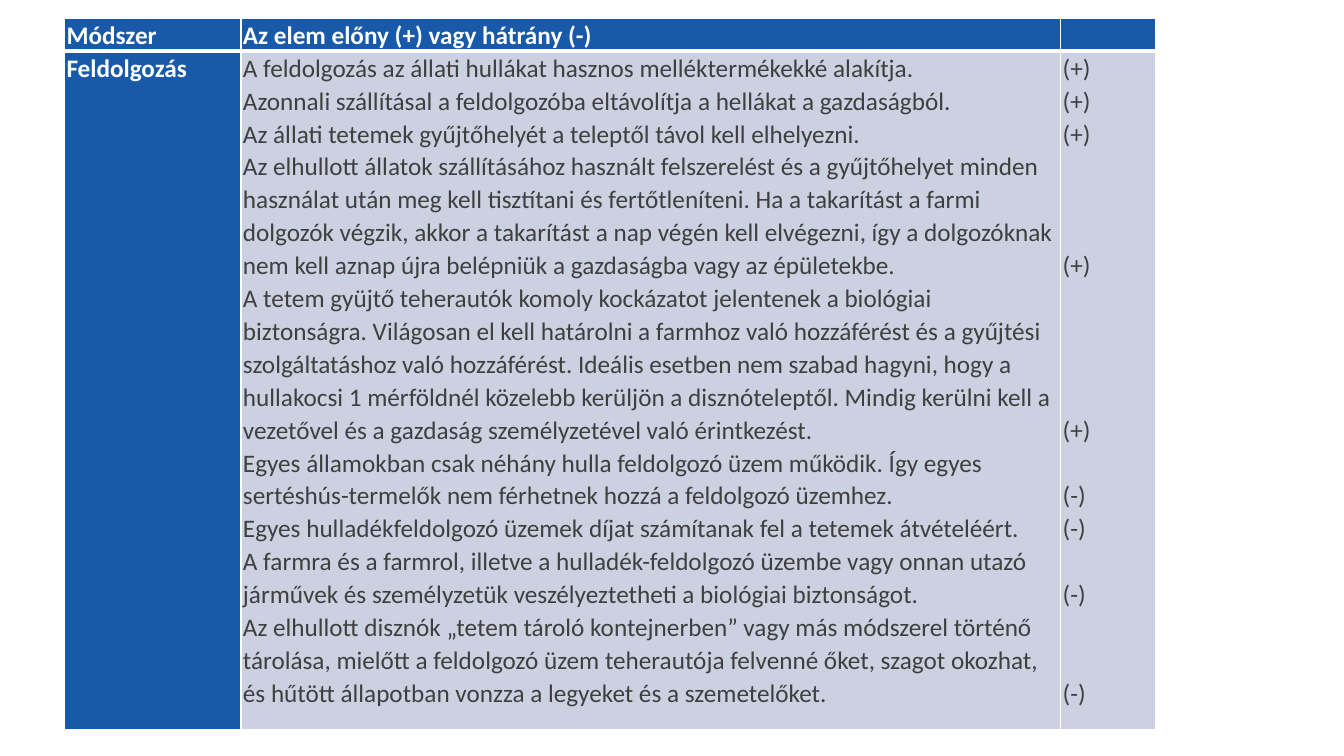
import pptx
import pptx.util
import pptx.dml.color
import pptx.oxml
import pptx.oxml.ns
from pptx.util import Inches

COLORS = {"header": "1859A9", "body": "CCD1E2", "text": "3F3F3F", "white": "FFFFFF"}
FONT = "Calibri"
FONT_SIZE = 18
LINE_SPACING = 1.07
LINE_HEIGHT = 23.5
COLUMN_WIDTHS = [1.75, 8.13, 0.94]
ROW_HEIGHTS = [0.22, 6.73]

HEADINGS = ["Módszer", "Az elem előny (+) vagy hátrány (-)", ""]
METHOD = "Feldolgozás"
ASSESSMENTS = [
    ("A feldolgozás az állati hullákat hasznos melléktermékekké alakítja.", "(+)", 1),
    ("Azonnali szállításal a feldolgozóba eltávolítja a hellákat a gazdaságból.", "(+)", 1),
    ("Az állati tetemek gyűjtőhelyét a teleptől távol kell elhelyezni.", "(+)", 1),
    ("Az elhullott állatok szállításához használt felszerelést és a gyűjtőhelyet minden "
     "használat után meg kell tisztítani és fertőtleníteni. Ha a takarítást a farmi "
     "dolgozók végzik, akkor a takarítást a nap végén kell elvégezni, így a dolgozóknak "
     "nem kell aznap újra belépniük a gazdaságba vagy az épületekbe.", "(+)", 4),
    ("A tetem gyüjtő teherautók komoly kockázatot jelentenek a biológiai "
     "biztonságra. Világosan el kell határolni a farmhoz való hozzáférést és a gyűjtési "
     "szolgáltatáshoz való hozzáférést. Ideális esetben nem szabad hagyni, hogy a "
     "hullakocsi 1 mérföldnél közelebb kerüljön a disznóteleptől. Mindig kerülni kell a "
     "vezetővel és a gazdaság személyzetével való érintkezést.", "(+)", 5),
    ("Egyes államokban csak néhány hulla feldolgozó üzem működik. Így egyes "
     "sertéshús-termelők nem férhetnek hozzá a feldolgozó üzemhez.", "(-)", 2),
    ("Egyes hulladékfeldolgozó üzemek díjat számítanak fel a tetemek átvételéért.", "(-)", 1),
    ("A farmra és a farmrol, illetve a hulladék-feldolgozó üzembe vagy onnan utazó "
     "járművek és személyzetük veszélyeztetheti a biológiai biztonságot.", "(-)", 2),
    ("Az elhullott disznók „tetem tároló kontejnerben” vagy más módszerel történő "
     "tárolása, mielőtt a feldolgozó üzem teherautója felvenné őket, szagot okozhat, "
     "és hűtött állapotban vonzza a legyeket és a szemetelőket.", "(-)", 3),
]


def rgb(name):
    return pptx.dml.color.RGBColor.from_string(COLORS[name])


def set_borders(cell, top, bottom):
    properties = cell._tc.get_or_add_tcPr()
    for side, width in (("L", 1), ("R", 1), ("T", top), ("B", bottom)):
        properties.append(pptx.oxml.parse_xml(
            f'<a:ln{side} {pptx.oxml.ns.nsdecls("a")} w="{pptx.util.Pt(width)}">'
            f'<a:solidFill><a:srgbClr val="{COLORS["white"]}"/></a:solidFill></a:ln{side}>'))


def fill_cell(cell, lines, fill, color, bold):
    cell.margin_left = cell.margin_right = Inches(0.02)
    cell.margin_top = cell.margin_bottom = 0
    cell.fill.solid()
    cell.fill.fore_color.rgb = rgb(fill)
    for index, (text, blank_lines) in enumerate(lines):
        frame = cell.text_frame
        paragraph = frame.add_paragraph() if index else frame.paragraphs[0]
        paragraph.line_spacing = LINE_SPACING
        if blank_lines:
            paragraph.space_before = pptx.util.Pt(blank_lines * LINE_HEIGHT)
        run = paragraph.add_run()
        run.text = text
        run.font.name = FONT
        run.font.size = pptx.util.Pt(FONT_SIZE)
        run.font.bold = bold
        run.font.color.rgb = rgb(color)


def add_assessment_table(slide, left, top, width, height):
    table = slide.shapes.add_table(2, 3, left, top, width, height).table
    for column, column_width in zip(table.columns, COLUMN_WIDTHS):
        column.width = Inches(column_width)
    for row, row_height in zip(table.rows, ROW_HEIGHTS):
        row.height = Inches(row_height)

    for column, heading in enumerate(HEADINGS):
        set_borders(table.cell(0, column), 1, 3)
        set_borders(table.cell(1, column), 3, 1)
        lines = [(heading, 0)] if heading else []
        fill_cell(table.cell(0, column), lines, "header", "white", True)

    statements = [(statement, 0) for statement, _, _ in ASSESSMENTS]
    signs = [(sign, line_count - 1) for _, sign, line_count in ASSESSMENTS]
    fill_cell(table.cell(1, 0), [(METHOD, 0)], "header", "white", True)
    fill_cell(table.cell(1, 1), statements, "body", "text", False)
    fill_cell(table.cell(1, 2), signs, "body", "text", False)


def main():
    presentation = pptx.Presentation()
    presentation.slide_width = Inches(13.33)
    presentation.slide_height = Inches(7.5)
    slide = presentation.slides.add_slide(presentation.slide_layouts[6])
    add_assessment_table(slide, Inches(0.64), Inches(0.18),
                         Inches(sum(COLUMN_WIDTHS)), Inches(sum(ROW_HEIGHTS)))
    presentation.save("out.pptx")


if __name__ == "__main__":
    main()
